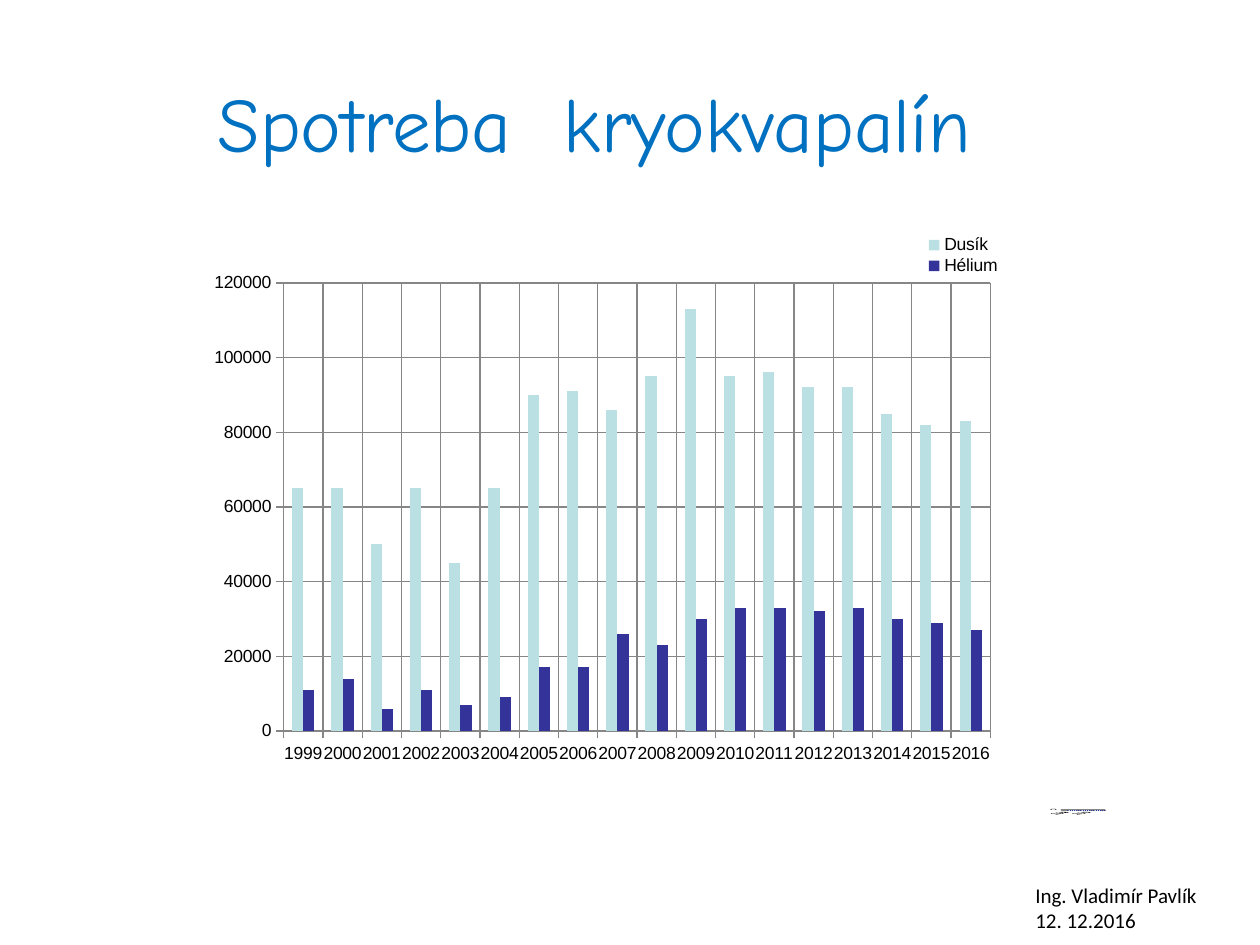
from lxml import etree
from pptx import Presentation
from pptx import util as u
from pptx.chart.data import CategoryChartData
from pptx.dml.color import RGBColor
from pptx.enum import chart as kinds, text
from pptx.oxml.ns import qn

PX = 914400 / 126
COLORS = {"title": "0070C0", "text": "000000", "grid": "868686",
          "Dusík": "BBE0E3", "Hélium": "333399"}
YEARS = range(1997, 2017)
THOUSANDS = {
    "Dusík": [75, 50, 65, 65, 50, 65, 45, 65, 90, 91,
              86, 95, 113, 95, 96, 92, 92, 85, 82, 83],
    "Hélium": [10, 11, 11, 14, 6, 11, 7, 9, 17, 17,
               26, 23, 30, 33, 33, 32, 33, 30, 29, 27],
}


def place(part, index, fractions, inner=False):
    """Give a plot area or legend a fixed place, in fractions of the chart."""
    for old in part.findall(qn("c:layout")):
        part.remove(old)
    layout = etree.Element(qn("c:layout"))
    manual = etree.SubElement(layout, qn("c:manualLayout"))
    settings = [("layoutTarget", "inner")] if inner else []
    settings += [("xMode", "edge"), ("yMode", "edge")]
    settings += zip("xywh", fractions)
    for name, value in settings:
        etree.SubElement(manual, qn(f"c:{name}")).set("val", str(value))
    part.insert(index, layout)


deck = Presentation()
deck.slide_width, deck.slide_height = u.Inches(10), u.Inches(7.5)
page = deck.slides.add_slide(deck.slide_layouts[6])

# Title and author
center, left = text.PP_ALIGN.CENTER, text.PP_ALIGN.LEFT
boxes = [
    ((59, 69, 1071, 158), center, "Comic Neue", 44, "title",
     [["Spotreba", " ", "kryokvapalín"]]),
    ((1023, 876, 266, 64), left, "Calibri", 12, "text",
     [["Ing. Vladimír Pavlík"], ["12. 12.2016"]]),
]
for area, align, font, size, color, lines in boxes:
    box = page.shapes.add_textbox(*[round(n * PX) for n in area])
    frame = box.text_frame
    frame.word_wrap = True
    for number, line in enumerate(lines):
        para = frame.add_paragraph() if number else frame.paragraphs[0]
        para.alignment = align
        for words in line:
            span = para.add_run()
            span.text = words
            span.font.name, span.font.size = font, u.Pt(size)
            span.font.color.rgb = RGBColor.from_string(COLORS[color])
            if words == " ":
                span.font._element.set("spc", "1500")  # wide word gap

# Small chart of the first 18 years, large chart of the last 18
charts = [
    ((1047, 809, 59, 6), slice(0, 18), False,
     (0.1, 0.09, 0.89, 0.75), (0.1, 0.85, 0.3, 0.15)),
    ((174, 234, 877, 538), slice(2, 20), True,
     (0.125, 0.091, 0.806, 0.833), (0.85, 0, 0.1, 0.08)),
]
for area, span_of_years, category_grid, plot_place, legend_place in charts:
    data = CategoryChartData()
    data.categories = [str(year) for year in YEARS[span_of_years]]
    for name, values in THOUSANDS.items():
        data.add_series(name, [1000 * value for value in values[span_of_years]])
    chart = page.shapes.add_chart(
        kinds.XL_CHART_TYPE.COLUMN_CLUSTERED,
        *[round(n * PX) for n in area], data).chart
    chart.has_title = False
    chart.font.name, chart.font.size = "Arial", u.Pt(10)
    chart.font.color.rgb = RGBColor.from_string(COLORS["text"])

    plot = chart.plots[0]
    plot.vary_by_categories = False
    plot.gap_width, plot.overlap = 150, 0
    for series in plot.series:
        series.format.fill.solid()
        series.format.fill.fore_color.rgb = RGBColor.from_string(COLORS[series.name])

    chart.value_axis.minimum_scale = 0
    chart.value_axis.maximum_scale = 120000
    chart.value_axis.major_unit = 20000
    for axis, grid in ((chart.category_axis, category_grid), (chart.value_axis, True)):
        axis.has_major_gridlines = grid
        axis.major_tick_mark = kinds.XL_TICK_MARK.OUTSIDE
        lines = [axis.format.line]
        if grid:
            lines.append(axis.major_gridlines.format.line)
        for line in lines:
            line.color.rgb = RGBColor.from_string(COLORS["grid"])
            line.width = u.Pt(0.75)

    chart.has_legend = True
    chart.legend.position = kinds.XL_LEGEND_POSITION.RIGHT
    chart.legend.include_in_layout = False
    place(plot._element.getparent(), 0, plot_place, inner=True)
    place(chart.legend._element, 1, legend_place)

deck.save("out.pptx")
